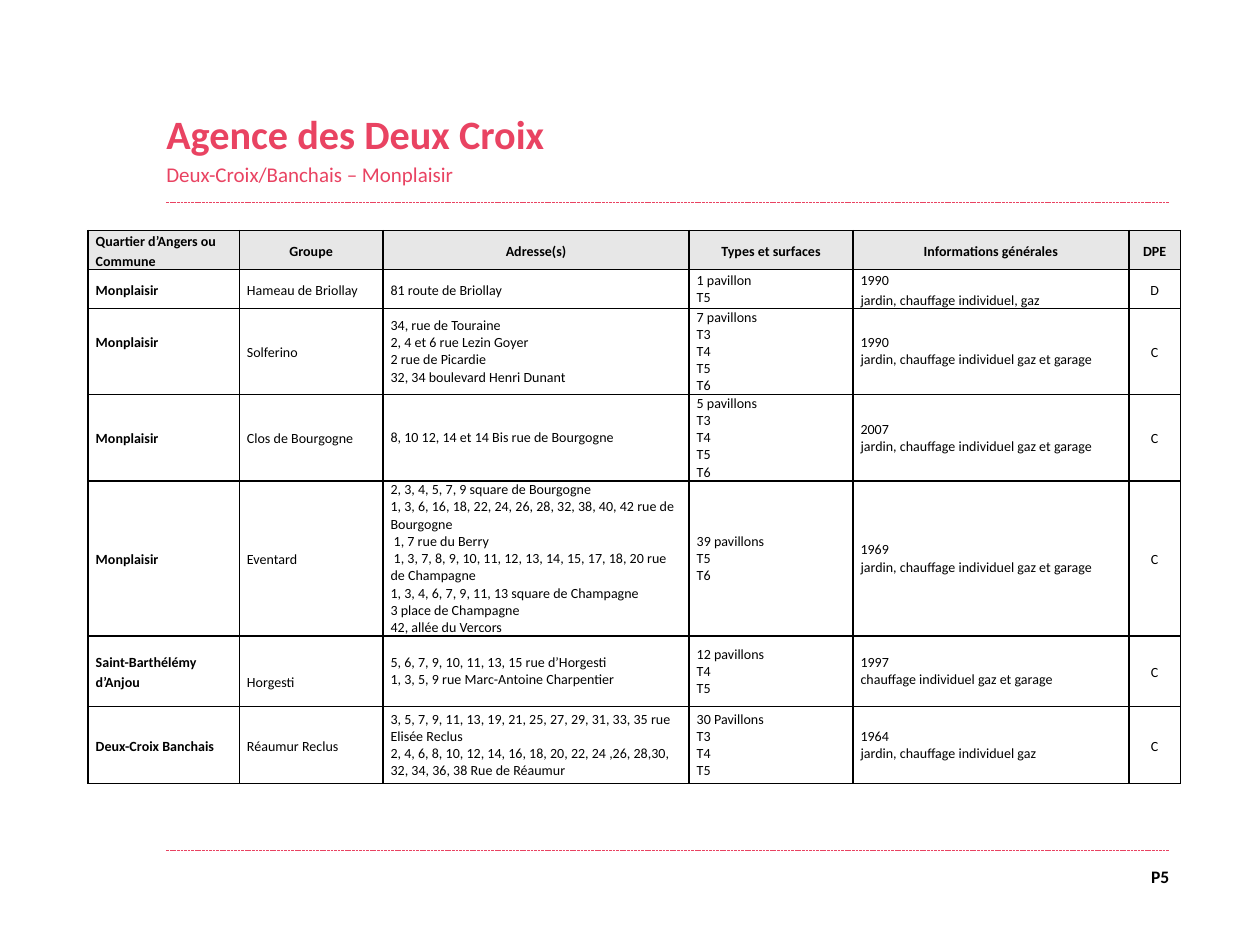
from dataclasses import dataclass

from lxml import etree
from pptx import Presentation
from pptx.dml.color import RGBColor
from pptx.enum.dml import MSO_LINE
from pptx.enum.shapes import MSO_CONNECTOR
from pptx.enum.text import MSO_ANCHOR, PP_ALIGN
from pptx.oxml.ns import qn
from pptx.util import Inches, Pt

LEFT, MID, RIGHT = PP_ALIGN.LEFT, PP_ALIGN.CENTER, PP_ALIGN.RIGHT
CENTRE, BOTTOM, TOP = MSO_ANCHOR.MIDDLE, MSO_ANCHOR.BOTTOM, MSO_ANCHOR.TOP
DASH = MSO_LINE.SQUARE_DOT
STRAIGHT = MSO_CONNECTOR.STRAIGHT
FONT = "Calibri"
PINK, BLACK, GREY = "E94362", "000000", "E7E7E7"
START, END = 1.32, 9.28
WIDTHS = [1.2, 1.14, 2.43, 1.3, 2.19, 0.41]
HEADS = ["Quartier d’Angers ou Commune", "Groupe", "Adresse(s)",
         "Types et surfaces", "Informations générales", "DPE"]
TYPES, INFO, RATING = 3, 4, 5


@dataclass
class Group:
    height: float
    area: str
    name: str
    streets: list[str]
    types: list[str]
    year: str
    info: str
    rating: str = "C"
    lift: float = 0
    drop: float = 0

    def texts(self) -> list[str]:
        return [self.area, self.name, "\n".join(self.streets),
                "\n".join(self.types), f"{self.year}\n{self.info}", self.rating]


HEAT = "jardin, chauffage individuel gaz"
GARAGE = f"{HEAT} et garage"
GROUPS = [
    Group(0.31, "Monplaisir", "Hameau de Briollay", ["81 route de Briollay"],
          ["1 pavillon", "T5"], "1990", "jardin, chauffage individuel, gaz", "D"),
    Group(0.68, "Monplaisir", "Solferino",
          ["34, rue de Touraine", "2, 4 et 6 rue Lezin Goyer",
           "2 rue de Picardie", "32, 34 boulevard Henri Dunant"],
          ["7 pavillons", "T3", "T4", "T5", "T6"], "1990", GARAGE, lift=0.16),
    Group(0.69, "Monplaisir", "Clos de Bourgogne",
          ["8, 10 12, 14 et 14 Bis rue de Bourgogne"],
          ["5 pavillons", "T3", "T4", "T5", "T6"], "2007", GARAGE),
    Group(1.23, "Monplaisir", "Eventard",
          ["2, 3, 4, 5, 7, 9 square de Bourgogne",
           "1, 3, 6, 16, 18, 22, 24, 26, 28, 32, 38, 40, 42 rue de Bourgogne",
           " 1, 7 rue du Berry",
           " 1, 3, 7, 8, 9, 10, 11, 12, 13, 14, 15, 17, 18, 20 rue de Champagne",
           "1, 3, 4, 6, 7, 9, 11, 13 square de Champagne",
           "3 place de Champagne", "42, allée du Vercors"],
          ["39 pavillons", "T5", "T6"], "1969", GARAGE),
    Group(0.56, "Saint-Barthélémy d’Anjou", "Horgesti",
          ["5, 6, 7, 9, 10, 11, 13, 15 rue d’Horgesti",
           "1, 3, 5, 9 rue Marc-Antoine Charpentier"],
          ["12 pavillons", "T4", "T5"], "1997",
          "chauffage individuel gaz et garage", drop=0.16),
    Group(0.61, "Deux-Croix Banchais", "Réaumur Reclus",
          ["3, 5, 7, 9, 11, 13, 19, 21, 25, 27, 29, 31, 33, 35 rue Elisée Reclus",
           "2, 4, 6, 8, 10, 12, 14, 16, 18, 20, 22, 24 ,26, 28,30, "
           "32, 34, 36, 38 Rue de Réaumur"],
          ["30 Pavillons", "T3", "T4", "T5"], "1964", HEAT),
]


def tint(code: str) -> RGBColor:
    return RGBColor.from_string(code)


def style(para, size: float, color: str, bold: bool, align=LEFT) -> None:
    para.alignment = align
    for run in para.runs:
        font = run.font
        font.name, font.size, font.bold = FONT, Pt(size), bold
        font.color.rgb = tint(color)


def add_rule(slide, top: float) -> None:
    line = slide.shapes.add_connector(
        STRAIGHT, Inches(START), Inches(top), Inches(END), Inches(top))
    line.line.color.rgb = tint(PINK)
    line.line.width = Pt(0.5)
    line.line.dash_style = DASH
    etree.SubElement(line.element.spPr, qn("a:effectLst"))


def add_box(slide, left: float, top: float, width: float, height: float,
            text: str, anchor):
    box = slide.shapes.add_textbox(
        Inches(left), Inches(top), Inches(width), Inches(height))
    frame = box.text_frame
    frame.word_wrap = True
    frame.vertical_anchor = anchor
    frame.margin_left = frame.margin_right = 0
    frame.margin_top = frame.margin_bottom = 0
    frame.text = text
    return frame.paragraphs


def add_edges(cell) -> None:
    props = cell._tc.get_or_add_tcPr()
    for side in ("lnL", "lnR", "lnT", "lnB"):
        edge = etree.SubElement(props, qn(f"a:{side}"), w=str(Pt(1)))
        fill = etree.SubElement(edge, qn("a:solidFill"))
        etree.SubElement(fill, qn("a:srgbClr"), val=BLACK)


def fill_cell(cell, text: str, row: int, col: int) -> None:
    head = row == 0
    cell.margin_left = cell.margin_right = Inches(0.06)
    cell.margin_top = cell.margin_bottom = 0
    cell.vertical_anchor = CENTRE
    add_edges(cell)
    if head:
        cell.fill.solid()
        cell.fill.fore_color.rgb = tint(GREY)
    else:
        cell.fill.background()
    cell.text_frame.text = text
    loose = head or col in (0, 1, RATING) or (row == 1 and col != TYPES)
    align = MID if col == RATING or (head and col > 0) else LEFT
    for para in cell.text_frame.paragraphs:
        para.line_spacing = 1.15 if loose else 1.0
        style(para, 8, BLACK, head or col == 0, align)


def add_grid(slide) -> None:
    highs = [0.31] + [group.height for group in GROUPS]
    grid = slide.shapes.add_table(
        len(highs), len(WIDTHS), Inches(0.7), Inches(1.83),
        Inches(sum(WIDTHS)), Inches(sum(highs))).table
    grid.first_row = grid.horz_banding = False
    for col, width in enumerate(WIDTHS):
        grid.columns[col].width = Inches(width)
    rows = [HEADS] + [group.texts() for group in GROUPS]
    for row, texts in enumerate(rows):
        grid.rows[row].height = Inches(highs[row])
        for col, text in enumerate(texts):
            fill_cell(grid.cell(row, col), text, row, col)
    for row, group in enumerate(GROUPS, 1):
        grid.cell(row, 0).margin_bottom = Inches(group.lift)
        grid.cell(row, 1).margin_top = Inches(group.drop)


def main() -> None:
    deck = Presentation()
    deck.slide_width, deck.slide_height = Inches(10), Inches(7.5)
    slide = deck.slides.add_slide(deck.slide_layouts[6])
    for top in (1.61, 6.75):
        add_rule(slide, top)
    page = add_box(slide, 8.94, 6.87, 0.34, 0.2, "P5", TOP)
    style(page[0], 10, BLACK, True, RIGHT)
    title, place = add_box(
        slide, START, 0.73, 6.24, 0.75,
        "Agence des Deux Croix\nDeux-Croix/Banchais – Monplaisir", BOTTOM)
    style(title, 23, PINK, True)
    style(place, 12, PINK, False)
    place.space_before = Pt(2.4)
    add_grid(slide)
    deck.save("out.pptx")


if __name__ == "__main__":
    main()
